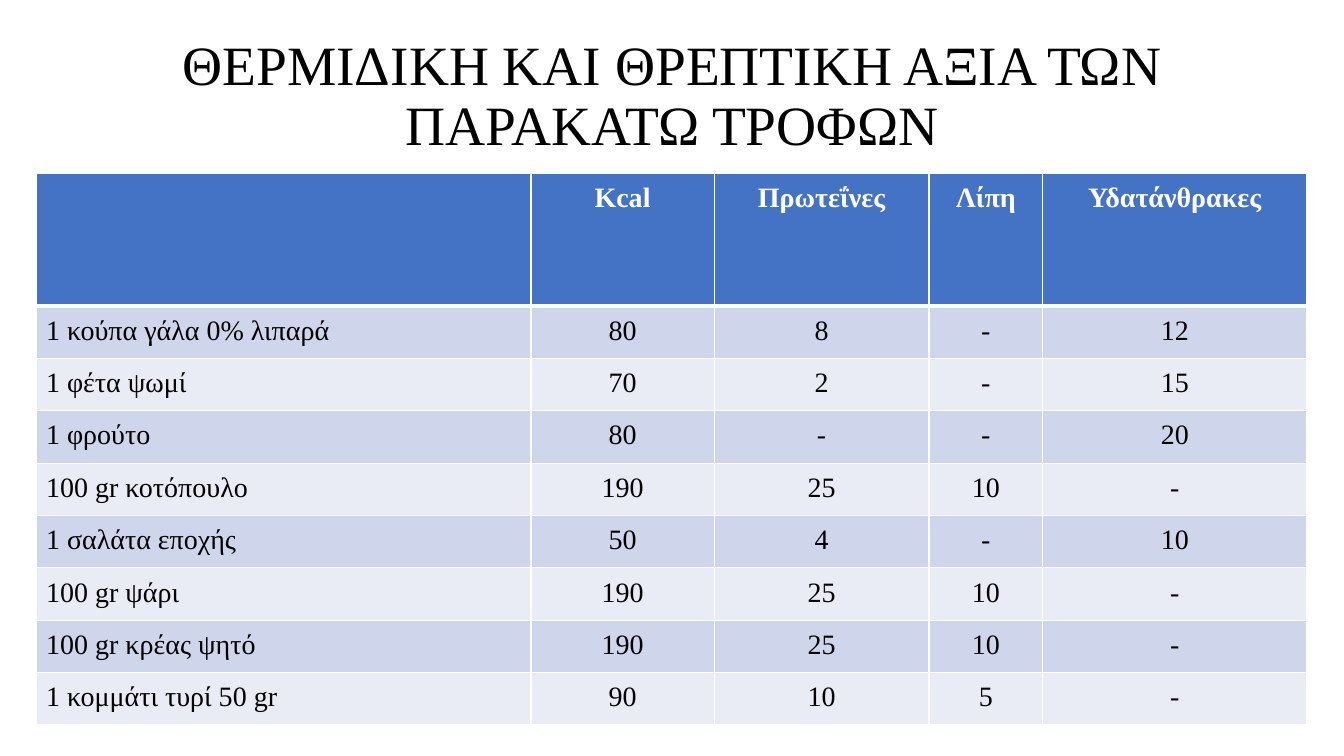
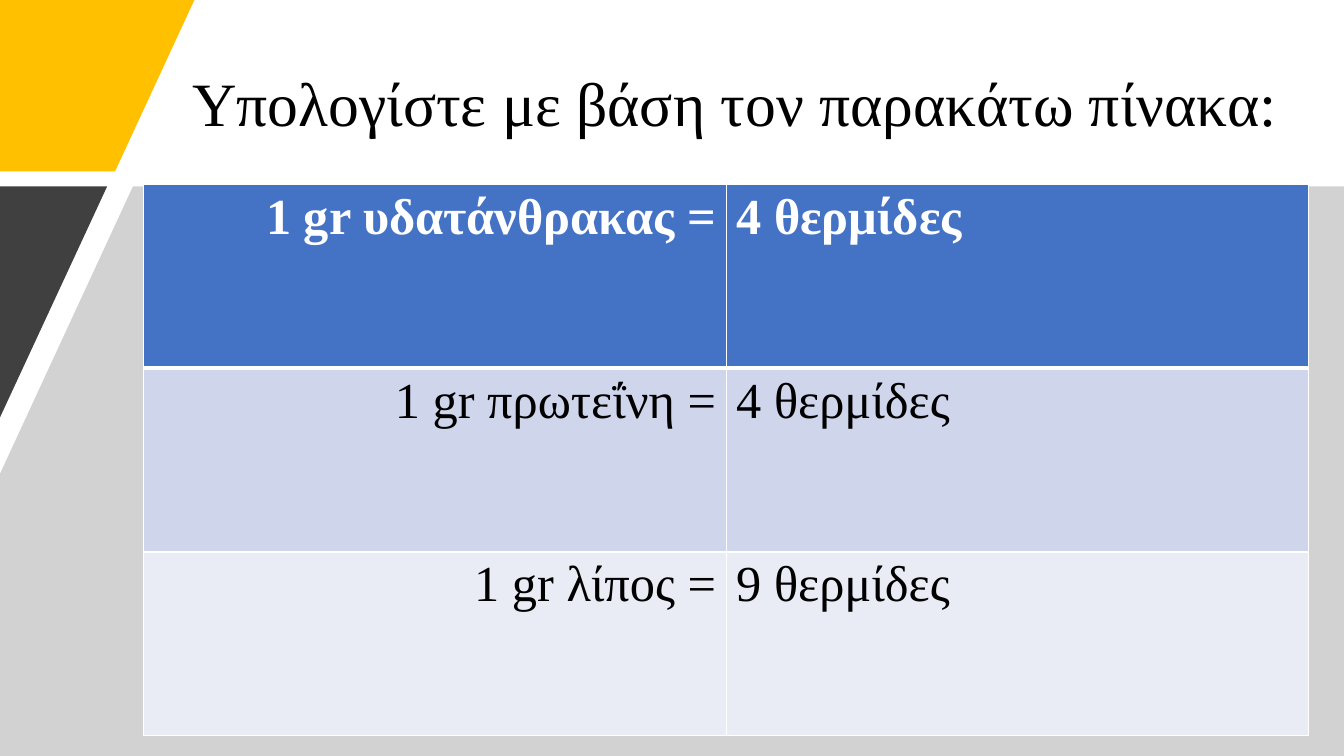
from dataclasses import dataclass

from lxml import etree
from pptx import Presentation
from pptx.dml.color import RGBColor
from pptx.enum.text import MSO_ANCHOR, PP_ALIGN
from pptx.oxml.ns import qn
from pptx.util import Cm, Pt

LEFT, CENTER, RIGHT = PP_ALIGN.LEFT, PP_ALIGN.CENTER, PP_ALIGN.RIGHT
MIDDLE = MSO_ANCHOR.MIDDLE
BLANK_LAYOUT = 6
PAGE_WIDTH, PAGE_HEIGHT = 33.87, 19.05


@dataclass(frozen=True)
class Theme:
    font: str = "Times New Roman"
    text: str = "000000"
    light: str = "FFFFFF"
    header: str = "4472C4"
    bands: tuple = ("CFD5EA", "E9EBF5")
    accent: str = "FFC000"
    dark: str = "404040"
    panel: str = "A6A6A6"
    long_title: float = 39.6
    title: float = 44
    small_cell: float = 20
    large_cell: float = 36
    thin: float = 1
    thick: float = 3


THEME = Theme()

FOODS = [
    ("", "Kcal", "Πρωτεΐνες", "Λίπη", "Υδατάνθρακες"),
    ("1 κούπα γάλα 0% λιπαρά", "80", "8", "-", "12"),
    ("1 φέτα ψωμί", "70", "2", "-", "15"),
    ("1 φρούτο", "80", "-", "-", "20"),
    ("100 gr κοτόπουλο", "190", "25", "10", "-"),
    ("1 σαλάτα εποχής", "50", "4", "-", "10"),
    ("100 gr ψάρι", "190", "25", "10", "-"),
    ("100 gr κρέας ψητό", "190", "25", "10", "-"),
    ("1 κομμάτι τυρί 50 gr", "90", "10", "5", "-"),
]

CALORIES = [
    ("1 gr υδατάνθρακας =", "4 θερμίδες"),
    ("1 gr πρωτεΐνη =", "4 θερμίδες"),
    ("1 gr λίπος =", "9 θερμίδες"),
]


def style_paragraph(para, size, color, align, bold=False):
    para.alignment = align
    for font in [para.font] + [span.font for span in para.runs]:
        font.name = THEME.font
        font.size = Pt(size)
        font.bold = bold
        font.color.rgb = RGBColor.from_string(color)


def add_title(page, text, area, size, align, space_before=0):
    box = page.shapes.add_textbox(*(Cm(length) for length in area))
    frame = box.text_frame
    frame.word_wrap = True
    frame.vertical_anchor = MIDDLE
    frame.text = text
    para = frame.paragraphs[0]
    para.line_spacing = 0.9
    para.space_before = Pt(space_before)
    style_paragraph(para, size, THEME.text, align)


def add_polygon(page, points, color, opacity=100):
    start, *others = [(Cm(x), Cm(y)) for x, y in points]
    builder = page.shapes.build_freeform(*start)
    builder.add_line_segments(others, close=True)
    shape = builder.convert_to_shape()
    shape.shadow.inherit = False
    shape.line.fill.background()
    shape.fill.solid()
    shape.fill.fore_color.rgb = RGBColor.from_string(color)
    if opacity < 100:
        solid = shape.fill._xPr.find(qn("a:solidFill"))
        alpha = etree.SubElement(solid[0], qn("a:alpha"))
        alpha.set("val", str(opacity * 1000))


def set_borders(cell, top, bottom):
    """Draw light borders; the XML schema wants them ahead of the fill."""
    widths = {"a:lnL": THEME.thin, "a:lnR": THEME.thin,
              "a:lnT": top, "a:lnB": bottom}
    properties = cell._tc.get_or_add_tcPr()
    for index, (tag, width) in enumerate(widths.items()):
        line = etree.Element(qn(tag), w=str(Pt(width)))
        solid = etree.SubElement(line, qn("a:solidFill"))
        etree.SubElement(solid, qn("a:srgbClr"), val=THEME.light)
        properties.insert(index, line)


def format_cell(cell, row, size, align):
    is_header = row == 0
    fill = THEME.header if is_header else THEME.bands[(row - 1) % 2]
    cell.fill.solid()
    cell.fill.fore_color.rgb = RGBColor.from_string(fill)
    set_borders(cell,
                top=THEME.thick if row == 1 else THEME.thin,
                bottom=THEME.thick if is_header else THEME.thin)
    color = THEME.light if is_header else THEME.text
    style_paragraph(cell.text_frame.paragraphs[0], size, color, align, is_header)


def add_grid(page, rows, corner, widths, heights, size, aligns, inset=None):
    """Add a table with a header row; inset, if given, applies to all sides."""
    left, top = corner
    frame = page.shapes.add_table(
        len(rows), len(widths), Cm(left), Cm(top),
        Cm(sum(widths)), Cm(sum(heights)))
    table = frame.table
    for column, width in zip(table.columns, widths):
        column.width = Cm(width)
    for row, (values, height) in enumerate(zip(rows, heights)):
        table.rows[row].height = Cm(height)
        for column, (value, align) in enumerate(zip(values, aligns)):
            cell = table.cell(row, column)
            cell.text_frame.text = value
            if inset is not None:
                cell.margin_left = cell.margin_right = Cm(inset)
                cell.margin_top = cell.margin_bottom = Cm(inset)
            format_cell(cell, row, size, align)


def add_slanted_backdrop(page):
    panel_top = 4.7
    add_polygon(page, [(0, 0), (4.9, 0), (2.9, 4.32), (0, 4.32)], THEME.accent)
    add_polygon(page, [(3.35, panel_top), (PAGE_WIDTH, panel_top),
                       (PAGE_WIDTH, PAGE_HEIGHT), (0, PAGE_HEIGHT),
                       (0, 11.94)], THEME.panel, opacity=50)
    add_polygon(page, [(0, panel_top), (2.7, panel_top), (0, 10.52)], THEME.dark)


def build_food_page(page):
    add_title(page, "ΘΕΡΜΙΔΙΚΗ ΚΑΙ ΘΡΕΠΤΙΚΗ ΑΞΙΑ ΤΩΝ ΠΑΡΑΚΑΤΩ ΤΡΟΦΩΝ",
              (2.33, 1.02, 29.21, 2.87), THEME.long_title, CENTER)
    add_grid(page, FOODS, (0.93, 4.38),
             widths=[12.45, 4.62, 5.41, 2.87, 6.65],
             heights=[3.33] + [1.32] * (len(FOODS) - 1),
             size=THEME.small_cell, aligns=[LEFT] + [CENTER] * 4, inset=0.23)


def build_calorie_page(page):
    add_title(page, "Υπολογίστε με βάση τον παρακάτω πίνακα:",
              (4.6, 1.02, 27.96, 3.33), THEME.title, LEFT, space_before=10)
    add_slanted_backdrop(page)
    add_grid(page, CALORIES, (3.62, 4.65),
             widths=[14.68] * 2, heights=[4.63] * len(CALORIES),
             size=THEME.large_cell, aligns=[RIGHT, LEFT])


def main():
    deck = Presentation()
    deck.slide_width, deck.slide_height = Cm(PAGE_WIDTH), Cm(PAGE_HEIGHT)
    for build_page in (build_food_page, build_calorie_page):
        build_page(deck.slides.add_slide(deck.slide_layouts[BLANK_LAYOUT]))
    deck.save("out.pptx")


if __name__ == "__main__":
    main()
